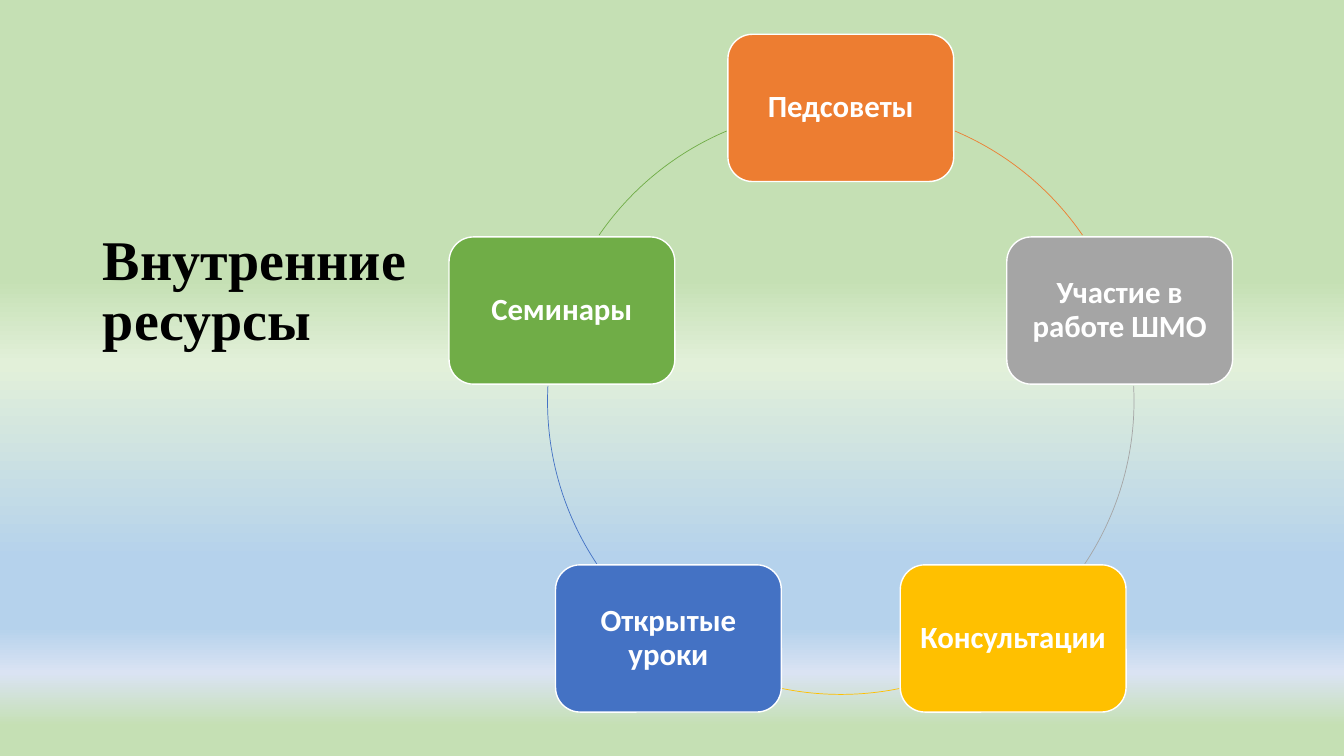
"""Build a slide with a ring of five internal resources."""
from math import cos, radians, sin

from lxml import etree
from pptx import Presentation
from pptx.dml.color import RGBColor
from pptx.enum.shapes import MSO_SHAPE
from pptx.enum.text import MSO_ANCHOR, MSO_AUTO_SIZE, PP_ALIGN
from pptx.oxml.ns import qn
from pptx.util import Cm, Pt

ARC, ROUNDED = MSO_SHAPE.ARC, MSO_SHAPE.ROUNDED_RECTANGLE
TOP, MIDDLE = MSO_ANCHOR.TOP, MSO_ANCHOR.MIDDLE
LEFT, CENTER = PP_ALIGN.LEFT, PP_ALIGN.CENTER
NO_FIT = MSO_AUTO_SIZE.NONE
TITLE_ONLY = 5
NODE_W, NODE_H, INSET = 5.69, 3.71, 0.23
ADJUSTMENT_PER_DEGREE = 0.6

BACKGROUND = [(37, "C5E0B4"), (48, "E2F0D9"), (74, "B5D2EC"),
              (83, "B5D2EC"), (89, "DAE3F3"), (96, "C5E0B4")]
RESOURCES = [
    ("Педсоветы", "ED7D31", 292.9, 325.5),
    ("Участие в работе ШМО", "A5A5A5", 357, 33.7),
    ("Консультации", "FFC000", 78.5, 101.5),
    ("Открытые уроки", "4472C4", 146.3, 183),
    ("Семинары", "70AD47", 214.5, 247.1),
]


def rgb(color):
    """Return the colour for a hex string."""
    return RGBColor.from_string(color)


def style_text(p, font, size, color, align):
    """Format a bold paragraph."""
    p.alignment, p.line_spacing = align, 0.9
    p.font.name, p.font.size, p.font.bold = font, Pt(size), True
    p.font.color.rgb = rgb(color)


def paint_background(s):
    """Fill the slide with a downward gradient."""
    fill = s.background.fill
    fill.gradient()
    fill.gradient_angle = 270
    stops = s.element.find(".//" + qn("a:gsLst"))
    for stop in list(stops):
        stops.remove(stop)
    for position, color in BACKGROUND:
        stop = etree.SubElement(stops, qn("a:gs"), pos=str(position * 1000))
        etree.SubElement(stop, qn("a:srgbClr"), val=color)


def place_title(s, text, x, y, w, h):
    """Put the title into the given box."""
    sp = s.shapes.title
    sp.left, sp.top, sp.width, sp.height = Cm(x), Cm(y), Cm(w), Cm(h)
    tf = sp.text_frame
    tf.text = text
    tf.word_wrap, tf.auto_size, tf.vertical_anchor = True, NO_FIT, TOP
    style_text(tf.paragraphs[0], "Times New Roman", 40, "000000", LEFT)


def add_node(group, text, color, x, y):
    """Add a labelled box centred on a point."""
    sp = group.shapes.add_shape(ROUNDED, Cm(x - NODE_W / 2), Cm(y - NODE_H / 2),
                                Cm(NODE_W), Cm(NODE_H))
    sp.shadow.inherit = False
    sp.fill.solid()
    sp.fill.fore_color.rgb = rgb(color)
    sp.line.color.rgb, sp.line.width = rgb("FFFFFF"), Pt(1)
    tf = sp.text_frame
    tf.text = text
    tf.word_wrap, tf.vertical_anchor = True, MIDDLE
    tf.margin_left = tf.margin_right = tf.margin_top = tf.margin_bottom = Cm(INSET)
    style_text(tf.paragraphs[0], "Calibri", 22, "FFFFFF", CENTER)


def add_arc(group, color, start, end, x, y, size):
    """Add a clockwise arc, in degrees from 0 to 360, in the given square."""
    sp = group.shapes.add_shape(ARC, Cm(x), Cm(y), Cm(size), Cm(size))
    sp.shadow.inherit = False
    sp.fill.background()
    sp.line.color.rgb, sp.line.width = rgb(color), Pt(0.5)
    for i, angle in enumerate((start, end)):
        sp.adjustments[i] = angle * ADJUSTMENT_PER_DEGREE


def add_ring(s, x, y, size):
    """Spread the resources evenly round a circle in the given square."""
    group = s.shapes.add_group_shape()
    radius = size / 2
    for i, (text, color, start, end) in enumerate(RESOURCES):
        angle = radians(360 / len(RESOURCES) * i - 90)
        add_arc(group, color, start, end, x, y, size)
        add_node(group, text, color, x + radius * (1 + cos(angle)),
                 y + radius * (1 + sin(angle)))


def main():
    """Build and save the presentation."""
    prs = Presentation()
    prs.slide_width, prs.slide_height = Cm(33.87), Cm(19.05)
    s = prs.slides.add_slide(prs.slide_layouts[TITLE_ONLY])
    paint_background(s)
    add_ring(s, 13.8, 2.72, 14.78)
    place_title(s, "Внутренние ресурсы", 2.34, 5.72, 10.92, 10.59)
    prs.save("out.pptx")


if __name__ == "__main__":
    main()
